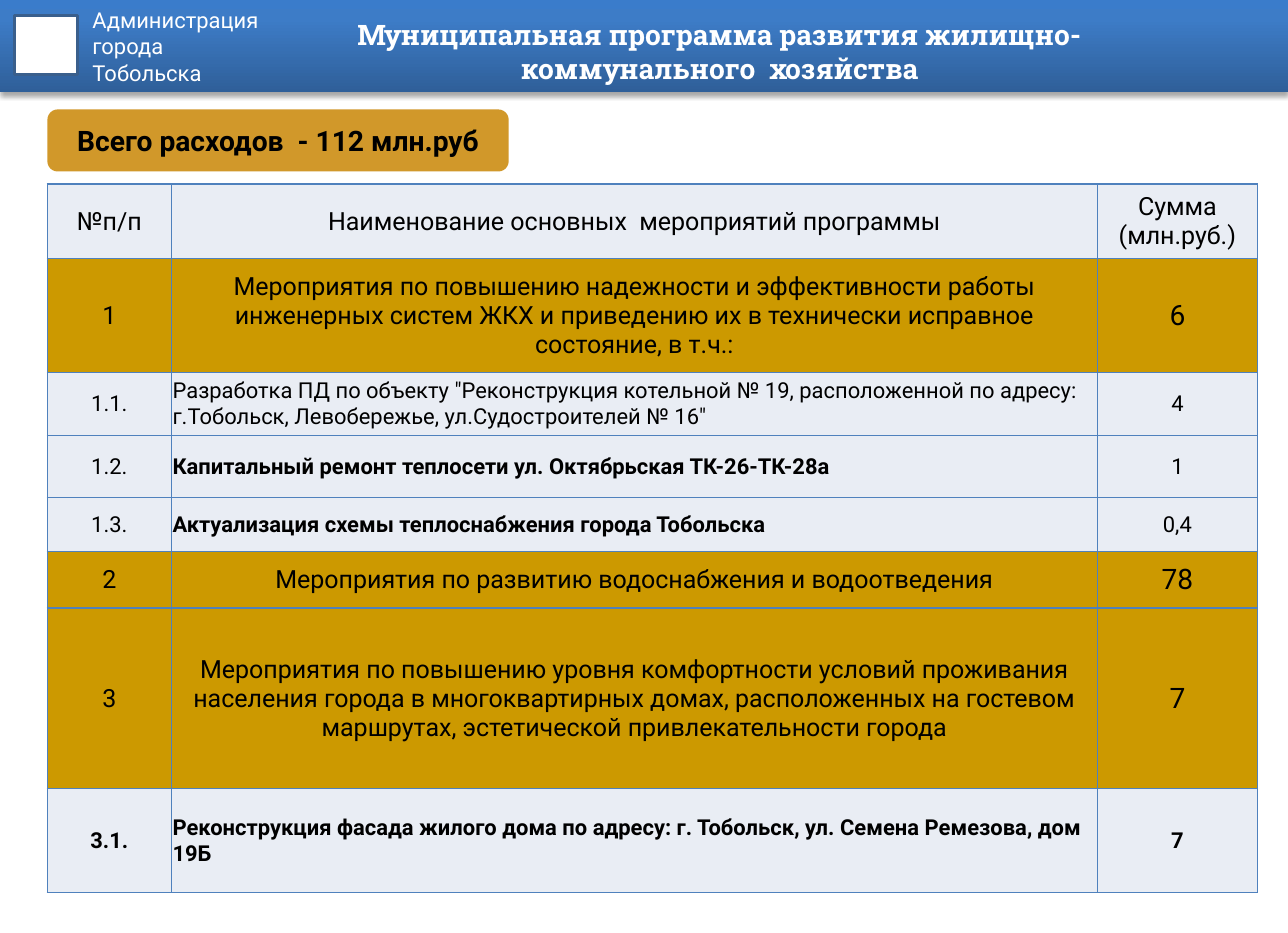
from copy import deepcopy

from lxml import etree
from pptx import Presentation
from pptx.dml.color import RGBColor
from pptx.enum.shapes import MSO_SHAPE as SHAPE
from pptx.enum.text import MSO_ANCHOR as ANCHOR, PP_ALIGN as ALIGN
from pptx.oxml import parse_xml
from pptx.oxml.ns import nsdecls, qn
from pptx.util import Inches, Pt


def rgb(value):
    return RGBColor.from_string(value)


def write(tf, lines, size, color="000000", bold=False, align=ALIGN.CENTER, font="Roboto"):
    tf.word_wrap = True
    tf.text = "\n".join(lines)
    for p in tf.paragraphs:
        p.alignment = align
        p.font.name = font
        p.font.size = Pt(size)
        p.font.bold = bold
        p.font.color.rgb = rgb(color)


prs = Presentation()
prs.slide_width, prs.slide_height = Inches(11.42), Inches(8.27)
slide = prs.slides.add_slide(prs.slide_layouts[6])
shapes = slide.shapes

header = shapes.add_shape(SHAPE.RECTANGLE, 0, 0, prs.slide_width, Inches(0.82))
header.line.fill.background()
header.fill.gradient()
header.fill.gradient_angle = 90
stops = header._element.spPr.find(qn("a:gradFill")).find(qn("a:gsLst"))
stops.append(deepcopy(stops[-1]))
for stop, (position, color) in zip(
    header.fill.gradient_stops, [(0, "2F5F99"), (0.8, "3D7CC7"), (1, "3A7CCB")]
):
    stop.position = position
    stop.color.rgb = rgb(color)
header._element.spPr.append(parse_xml(
    f'<a:effectLst {nsdecls("a")}>'
    f'<a:outerShdw blurRad="{Pt(3.1)}" dist="{Pt(1.8)}" dir="5400000" rotWithShape="0">'
    '<a:srgbClr val="000000"><a:alpha val="35000"/></a:srgbClr>'
    '</a:outerShdw></a:effectLst>'
))

emblem = shapes.add_shape(
    SHAPE.RECTANGLE, Inches(0.13), Inches(0.14), Inches(0.56), Inches(0.52)
)
emblem.shadow.inherit = False
emblem.fill.solid()
emblem.fill.fore_color.rgb = rgb("FFFFFF")
emblem.line.color.rgb = rgb("3A5F8C")
emblem.line.width = Pt(2)

office = shapes.add_textbox(Inches(0.71), 0, Inches(2.68), Inches(1.06))
write(office.text_frame, ["Администрация", "города", "Тобольска"], 14, "FFFFFF",
      align=ALIGN.LEFT)

title = shapes.add_textbox(Inches(2.09), 0, Inches(8.58), Inches(0.91))
write(title.text_frame,
      ["Муниципальная программа развития жилищно-коммунального  хозяйства"],
      18, "FFFFFF", bold=True, font="Roboto Slab")

total = shapes.add_shape(
    SHAPE.ROUNDED_RECTANGLE, Inches(0.42), Inches(0.97), Inches(4.09), Inches(0.55)
)
total.shadow.inherit = False
total.fill.solid()
total.fill.fore_color.rgb = rgb("D1982A")
total.line.fill.background()
write(total.text_frame, ["Всего расходов  - 112 млн.руб"], 18, bold=True)

for sp in (office, title, total):
    tf = sp.text_frame
    tf.margin_left = tf.margin_right = Inches(0.11)
    tf.margin_top = tf.margin_bottom = Inches(0.06)
    tf.vertical_anchor = ANCHOR.TOP if sp is office else ANCHOR.MIDDLE

rows = [
    ("head", 0.66, "№п/п", "Наименование основных  мероприятий программы",
     "Сумма\n(млн.руб.)"),
    ("group", 1.01, "1",
     "Мероприятия по повышению надежности и эффективности работы инженерных систем ЖКХ "
     "и приведению их в технически исправное состояние, в т.ч.:", "6"),
    ("item", 0.56, "1.1.",
     'Разработка ПД по объекту "Реконструкция котельной № 19, расположенной по адресу: '
     'г.Тобольск, Левобережье, ул.Судостроителей № 16"', "4"),
    ("bold name", 0.55, "1.2.",
     "Капитальный ремонт теплосети ул. Октябрьская ТК-26-ТК-28а", "1"),
    ("bold name", 0.48, "1.3.", "Актуализация схемы теплоснабжения города Тобольска", "0,4"),
    ("group", 0.5, "2", "Мероприятия по развитию водоснабжения и водоотведения", "78"),
    ("group", 1.6, "3",
     "Мероприятия по повышению уровня комфортности условий проживания населения города "
     "в многоквартирных домах, расположенных на гостевом маршрутах, эстетической "
     "привлекательности города", "7"),
    ("bold row", 0.92, "3.1.",
     "Реконструкция фасада жилого дома по адресу: г. Тобольск, ул. Семена Ремезова, дом 19Б",
     "7"),
]
styles = {
    "head": ("E9EDF4", (16, 16, 16), (False, False, False), ALIGN.CENTER),
    "group": ("CC9900", (16, 16, 18), (False, False, False), ALIGN.CENTER),
    "item": ("E9EDF4", (14, 14, 14), (False, False, False), ALIGN.LEFT),
    "bold name": ("E9EDF4", (14, 14, 14), (False, True, False), ALIGN.LEFT),
    "bold row": ("E9EDF4", (14, 14, 14), (True, True, True), ALIGN.LEFT),
}

table = shapes.add_table(
    len(rows), 3, Inches(0.42), Inches(1.63), Inches(10.73), Inches(6.28)
).table
for column, width in zip(table.columns, (1.1, 8.21, 1.42)):
    column.width = Inches(width)

for i, (kind, height, *texts) in enumerate(rows):
    table.rows[i].height = Inches(height)
    fill, sizes, bolds, name_align = styles[kind]
    for j, text in enumerate(texts):
        cell = table.cell(i, j)
        cell.margin_left = cell.margin_right = cell.margin_top = Inches(0.01)
        cell.margin_bottom = 0
        cell.vertical_anchor = ANCHOR.MIDDLE
        write(cell.text_frame, text.split("\n"), sizes[j], bold=bolds[j],
              align=name_align if j == 1 else ALIGN.CENTER)
        tc_pr = cell._tc.get_or_add_tcPr()
        for side in ("lnL", "lnR", "lnT", "lnB"):
            ln = etree.SubElement(tc_pr, qn(f"a:{side}"), w=str(Pt(1)))
            solid = etree.SubElement(ln, qn("a:solidFill"))
            etree.SubElement(solid, qn("a:srgbClr"), val="4F81BD")
        cell.fill.solid()
        cell.fill.fore_color.rgb = rgb(fill)

prs.save("out.pptx")
